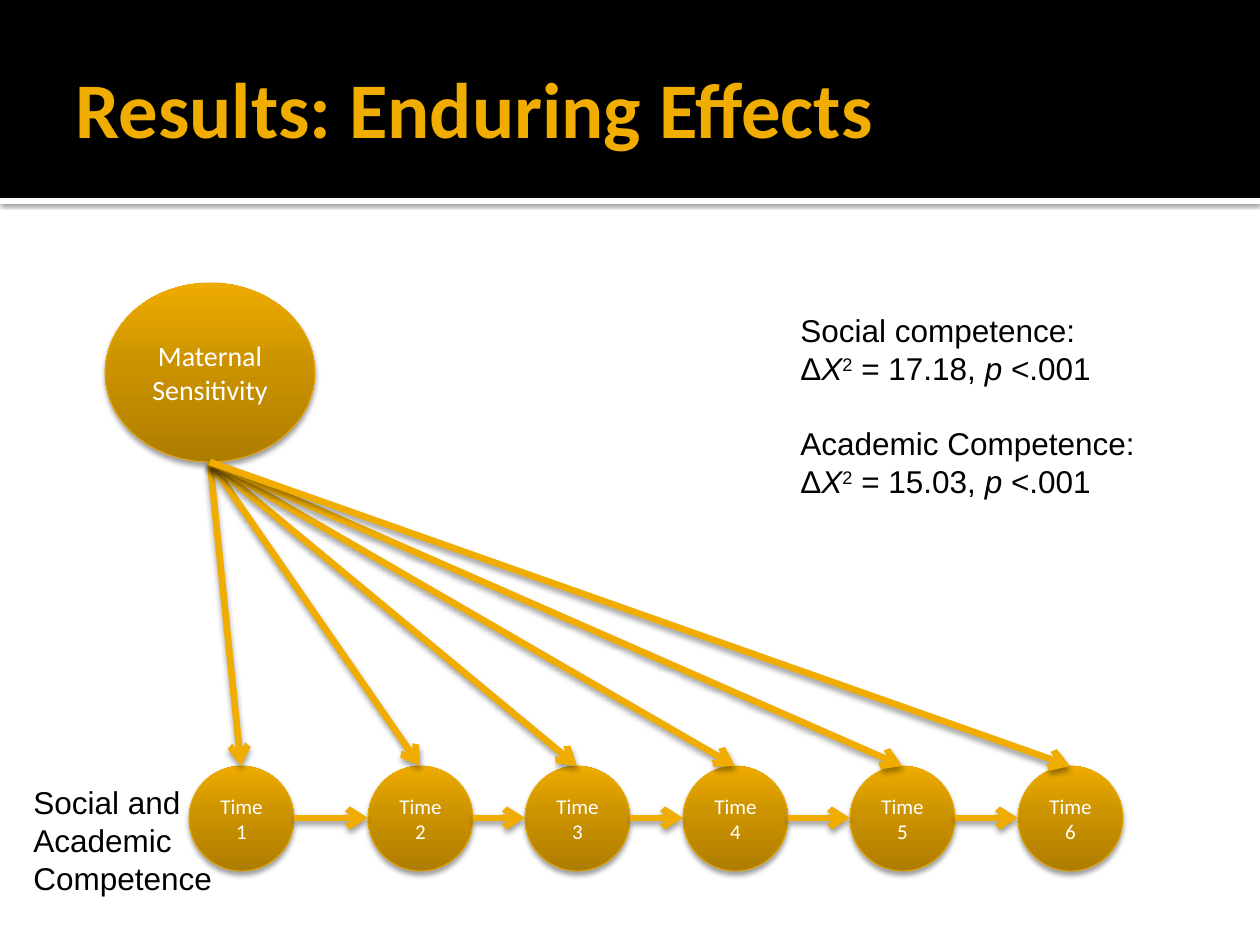
from dataclasses import dataclass
from itertools import pairwise

from lxml.etree import SubElement
from pptx import Presentation
from pptx.dml.color import RGBColor
from pptx.enum.shapes import MSO_CONNECTOR, MSO_SHAPE
from pptx.enum.text import MSO_ANCHOR, PP_ALIGN
from pptx.oxml import parse_xml
from pptx.oxml.ns import nsdecls, qn
from pptx.util import Pt

PX = 914400 / 126
COLORS = {
    "black": "000000",
    "white": "FFFFFF",
    "gold": "F0AD00",
    "rim": "EBA900",
    "deep": "AE7D00",
    "middle": "CC9300",
    "bright": "EEAB00",
}


@dataclass(frozen=True)
class Box:
    left: int
    top: int
    width: int
    height: int

    @property
    def right(self) -> int:
        return self.left + self.width

    @property
    def bottom(self) -> int:
        return self.top + self.height

    @property
    def center(self) -> int:
        return self.left + self.width // 2

    @property
    def middle(self) -> int:
        return self.top + self.height // 2

    def emu(self) -> list[int]:
        return [px(n) for n in (self.left, self.top, self.width, self.height)]


@dataclass(frozen=True)
class Bubble:
    label: str
    box: Box
    size: int


@dataclass(frozen=True)
class Finding:
    heading: str
    value: str


SENSITIVITY = Bubble("Maternal Sensitivity", Box(105, 283, 210, 179), 16)
TIMES = [
    Bubble(f"Time {number}", Box(left, 766, 105, 105), 12)
    for number, left in enumerate((189, 368, 525, 683, 850, 1018), 1)
]
FINDINGS = [
    Finding("Social competence:", "17.18"),
    Finding("Academic Competence:", "15.03"),
]


def px(length: int) -> int:
    return round(length * PX)


def rgb(name: str) -> RGBColor:
    return RGBColor.from_string(COLORS[name])


def style(run, font: str, size: int, color: str) -> None:
    run.font.name = font
    run.font.size = Pt(size)
    run.font.color.rgb = rgb(color)


def add_shadow(shape, opacity: int, blur: float, distance: float) -> None:
    properties = shape._element.spPr
    for old in properties.findall(qn("a:effectLst")):
        properties.remove(old)
    properties.append(parse_xml(
        f'<a:effectLst {nsdecls("a")}><a:outerShdw blurRad="{Pt(blur)}" '
        f'dist="{Pt(distance)}" dir="5400000" rotWithShape="0">'
        f'<a:srgbClr val="{COLORS["black"]}"><a:alpha val="{opacity * 1000}"/>'
        "</a:srgbClr></a:outerShdw></a:effectLst>"
    ))


def add_band(slide, box: Box, color: str):
    band = slide.shapes.add_shape(MSO_SHAPE.RECTANGLE, *box.emu())
    band.shadow.inherit = False
    band.fill.solid()
    band.fill.fore_color.rgb = rgb(color)
    band.line.fill.background()
    return band


def add_title(slide, text: str) -> None:
    title = slide.shapes.title
    title.left, title.top, title.width, title.height = Box(63, 21, 1134, 173).emu()
    frame = title.text_frame
    frame.text = text
    frame.vertical_anchor = MSO_ANCHOR.MIDDLE
    frame.margin_right = Pt(3.6)
    frame.paragraphs[0].alignment = PP_ALIGN.LEFT
    run = frame.paragraphs[0].runs[0]
    style(run, "Calibri", 45, "gold")
    run.font.bold = True
    slide.shapes._spTree.append(title._element)


def add_bubble(slide, bubble: Bubble) -> None:
    ellipse = slide.shapes.add_shape(MSO_SHAPE.OVAL, *bubble.box.emu())
    ellipse.line.color.rgb = rgb("rim")
    ellipse.line.width = Pt(0.5)
    stops = "".join(
        f'<a:gs pos="{position * 1000}"><a:srgbClr val="{COLORS[name]}"/></a:gs>'
        for position, name in ((0, "deep"), (55, "middle"), (100, "bright"))
    )
    ellipse._element.spPr.find(qn("a:prstGeom")).addnext(parse_xml(
        f'<a:gradFill {nsdecls("a")} rotWithShape="1"><a:gsLst>{stops}</a:gsLst>'
        '<a:lin ang="16200000" scaled="0"/></a:gradFill>'
    ))
    add_shadow(ellipse, 38, 3.1, 2)
    frame = ellipse.text_frame
    frame.text = bubble.label
    frame.word_wrap = True
    frame.vertical_anchor = MSO_ANCHOR.MIDDLE
    frame.paragraphs[0].alignment = PP_ALIGN.CENTER
    style(frame.paragraphs[0].runs[0], "Calibri", bubble.size, "white")


def add_arrow(slide, start: tuple[int, int], end: tuple[int, int]) -> None:
    arrow = slide.shapes.add_connector(
        MSO_CONNECTOR.STRAIGHT, *(px(n) for n in start + end)
    )
    arrow.line.color.rgb = rgb("gold")
    arrow.line.width = Pt(3.78)
    SubElement(arrow.line._get_or_add_ln(), qn("a:tailEnd"), type="arrow")
    add_shadow(arrow, 38, 3.5, 2)


def add_text_frame(slide, box: Box):
    frame = slide.shapes.add_textbox(*box.emu()).text_frame
    frame.word_wrap = True
    return frame


def add_findings(slide, box: Box, findings: list[Finding]) -> None:
    frame = add_text_frame(slide, box)
    for index, finding in enumerate(findings):
        heading = frame.add_paragraph() if index else frame.paragraphs[0]
        heading.text = finding.heading
        heading.space_before = Pt(21.5 if index else 0)
        style(heading.runs[0], "Arial", 18, "black")
        statistic = frame.add_paragraph()
        for part in ("Δ", "Χ", "2", f" = {finding.value}, ", "p", " <.001"):
            run = statistic.add_run()
            run.text = part
            style(run, "Arial", 18, "black")
            run.font.italic = part in ("Χ", "p")
            if part == "2":
                run.font._element.set("baseline", "30000")


def main() -> None:
    """Build the slide on the enduring effects of maternal sensitivity."""
    presentation = Presentation()
    presentation.slide_width, presentation.slide_height = px(1260), px(945)
    slide = presentation.slides.add_slide(presentation.slide_layouts[5])

    stripe = add_band(slide, Box(0, 198, 1260, 6), "white")
    add_shadow(stripe, 60, 2.5, 0.8)
    add_band(slide, Box(0, 0, 1260, 198), "black")
    add_title(slide, "Results: Enduring Effects")

    for bubble in (SENSITIVITY, *TIMES):
        add_bubble(slide, bubble)

    outcome = add_text_frame(slide, Box(21, 777, 252, 127))
    outcome.text = "Social and Academic Competence"
    style(outcome.paragraphs[0].runs[0], "Arial", 18, "black")

    source = SENSITIVITY.box
    for time in TIMES:
        add_arrow(slide, (source.center, source.bottom), (time.box.center, time.box.top))
    for earlier, later in pairwise(time.box for time in TIMES):
        add_arrow(slide, (earlier.right, earlier.middle), (later.left, later.middle))

    add_findings(slide, Box(788, 305, 388, 242), FINDINGS)
    presentation.save("out.pptx")


if __name__ == "__main__":
    main()
